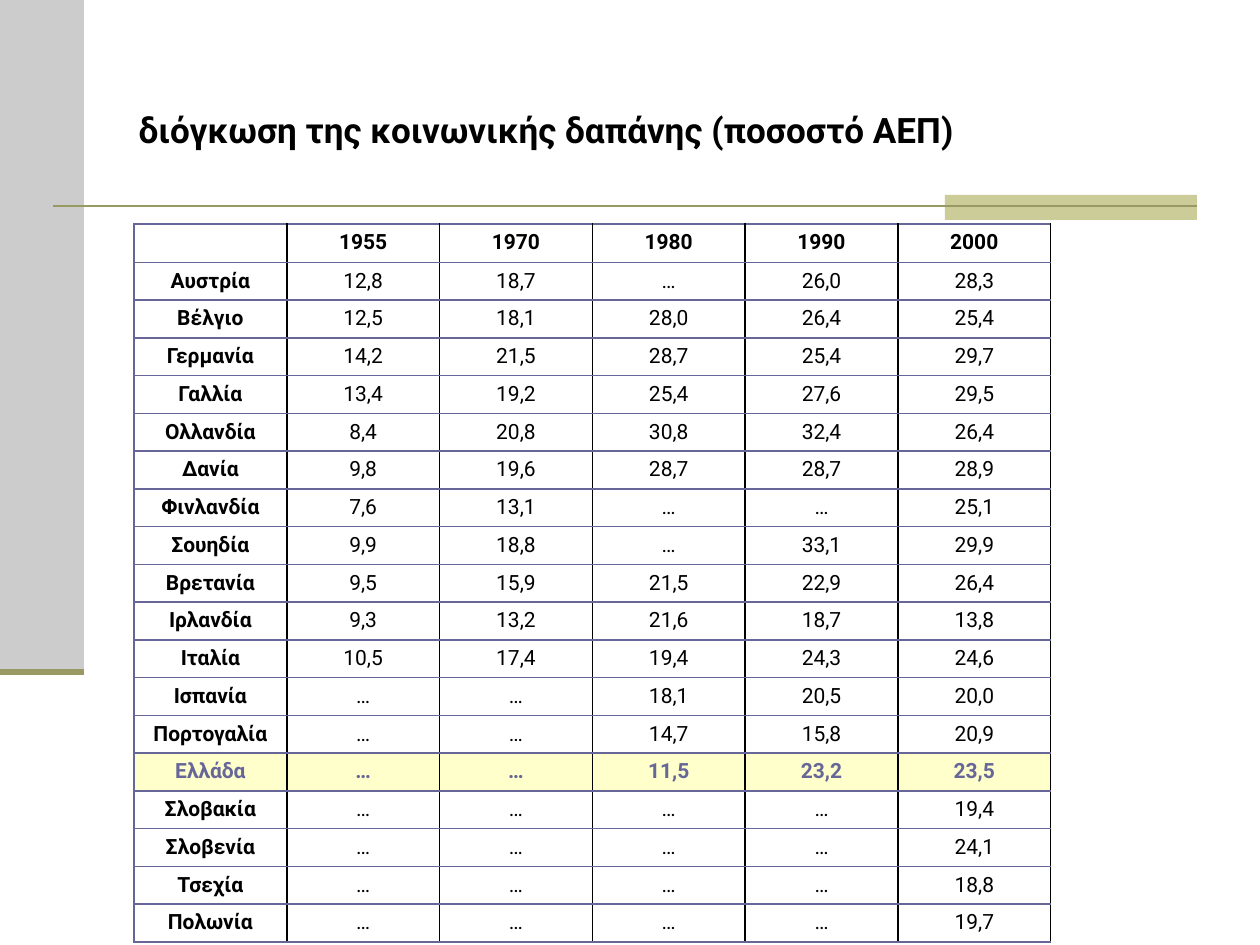
"""Build a slide with a table of social spending by country and year."""
import lxml.etree
import pptx
import pptx.dml.color
import pptx.enum.shapes
import pptx.enum.text
import pptx.oxml.ns
import pptx.util

EMU_PER_PX = 914400 / 126
FONT = "Roboto"
COLORS = {
    "text": "000000",
    "band": "CCCCCC",
    "accent": "CCCC99",
    "rule": "999966",
    "grid": "666699",
    "highlight": "FFFFCC",
}
TITLE = "διόγκωση της κοινωνικής δαπάνης (ποσοστό ΑΕΠ)"
HIGHLIGHTED = "Ελλάδα"
YEARS = ["", "1955", "1970", "1980", "1990", "2000"]
SPENDING = """
Αυστρία 12,8 18,7 … 26,0 28,3
Βέλγιο 12,5 18,1 28,0 26,4 25,4
Γερμανία 14,2 21,5 28,7 25,4 29,7
Γαλλία 13,4 19,2 25,4 27,6 29,5
Ολλανδία 8,4 20,8 30,8 32,4 26,4
Δανία 9,8 19,6 28,7 28,7 28,9
Φινλανδία 7,6 13,1 … … 25,1
Σουηδία 9,9 18,8 … 33,1 29,9
Βρετανία 9,5 15,9 21,5 22,9 26,4
Ιρλανδία 9,3 13,2 21,6 18,7 13,8
Ιταλία 10,5 17,4 19,4 24,3 24,6
Ισπανία … … 18,1 20,5 20,0
Πορτογαλία … … 14,7 15,8 20,9
Ελλάδα … … 11,5 23,2 23,5
Σλοβακία … … … … 19,4
Σλοβενία … … … … 24,1
Τσεχία … … … … 18,8
Πολωνία … … … … 19,7
"""


def px(length):
    """Turn pixels into EMU."""
    return pptx.util.Emu(round(length * EMU_PER_PX))


def color(name):
    """Look up a named colour."""
    return pptx.dml.color.RGBColor.from_string(COLORS[name])


def add_span(para, text, size, bold, color_name="text"):
    """Add one formatted run to a paragraph."""
    span = para.add_run()
    span.text = text
    span.font.name = FONT
    span.font.size = pptx.util.Pt(size)
    span.font.bold = bold
    span.font.color.rgb = color(color_name)


def add_block(page, left, top, width, height, color_name):
    """Add a plain filled rectangle."""
    block = page.shapes.add_shape(
        pptx.enum.shapes.MSO_SHAPE.RECTANGLE, px(left), px(top), px(width), px(height))
    block.shadow.inherit = False
    block.fill.solid()
    block.fill.fore_color.rgb = color(color_name)
    block.line.fill.background()


def add_rule(page, left, right, y, weight):
    """Add a horizontal line."""
    rule = page.shapes.add_connector(
        pptx.enum.shapes.MSO_CONNECTOR.STRAIGHT, px(left), px(y), px(right), px(y))
    rule.line.color.rgb = color("rule")
    rule.line.width = pptx.util.Pt(weight)
    properties = rule._element.spPr
    lxml.etree.SubElement(properties, pptx.oxml.ns.qn("a:effectLst"))


def place_title(page, left, top, width, height):
    """Move the title placeholder to the front and fill it."""
    box = page.shapes.title
    page.shapes._spTree.append(box._element)
    box.left, box.top, box.width, box.height = map(px, (left, top, width, height))
    frame = box.text_frame
    frame.word_wrap = True
    frame.auto_size = pptx.enum.text.MSO_AUTO_SIZE.NONE
    frame.vertical_anchor = pptx.enum.text.MSO_ANCHOR.MIDDLE
    para = frame.paragraphs[0]
    para.alignment = pptx.enum.text.PP_ALIGN.LEFT
    add_span(para, TITLE, 20, True)


def set_borders(cell, sides):
    """Draw one-point borders, given colour names by side."""
    qn = pptx.oxml.ns.qn
    properties = cell._tc.get_or_add_tcPr()
    for index, (side, color_name) in enumerate(sides.items()):
        edge = lxml.etree.Element(qn(f"a:ln{side}"), w=str(pptx.util.Pt(1)))
        fill = lxml.etree.SubElement(edge, qn("a:solidFill"))
        lxml.etree.SubElement(fill, qn("a:srgbClr"), val=COLORS[color_name])
        properties.insert(index, edge)


def fill_cell(cell, text, bold, highlighted, first):
    """Format a table cell and write its text."""
    if highlighted:
        cell.fill.solid()
        cell.fill.fore_color.rgb = color("highlight")
    else:
        cell.fill.background()
    left = "grid" if first else "text"
    set_borders(cell, {"L": left, "R": "text", "T": "grid", "B": "grid"})
    para = cell.text_frame.paragraphs[0]
    para.alignment = pptx.enum.text.PP_ALIGN.CENTER
    para.font.size = pptx.util.Pt(12)
    if text:
        add_span(para, text, 12, bold, "grid" if highlighted else "text")


def add_spending_table(page, left, top, width, height):
    """Add the table with equal columns and equal rows."""
    rows = [YEARS] + [line.split() for line in SPENDING.strip().splitlines()]
    table = page.shapes.add_table(
        len(rows), len(YEARS), px(left), px(top), px(width), px(height)).table
    table.first_row = False
    table.horz_banding = False
    for row_index, values in enumerate(rows):
        highlighted = values[0] == HIGHLIGHTED
        for column_index, text in enumerate(values):
            bold = row_index == 0 or column_index == 0 or highlighted
            fill_cell(table.cell(row_index, column_index), text, bold,
                      highlighted, column_index == 0)


def main():
    """Build and save the deck."""
    deck = pptx.Presentation()
    deck.slide_width, deck.slide_height = px(1260), px(945)
    page = deck.slides.add_slide(deck.slide_layouts.get_by_name("Title Only"))
    add_block(page, 0, 0, 84, 672, "band")
    add_block(page, 945, 195, 252, 25, "accent")
    add_rule(page, 53, 1197, 206, 1.5)
    add_rule(page, 0, 84, 672, 3.5)
    place_title(page, 126, 64, 1071, 131)
    add_spending_table(page, 134, 224, 917, 718)
    deck.save("out.pptx")


if __name__ == "__main__":
    main()
